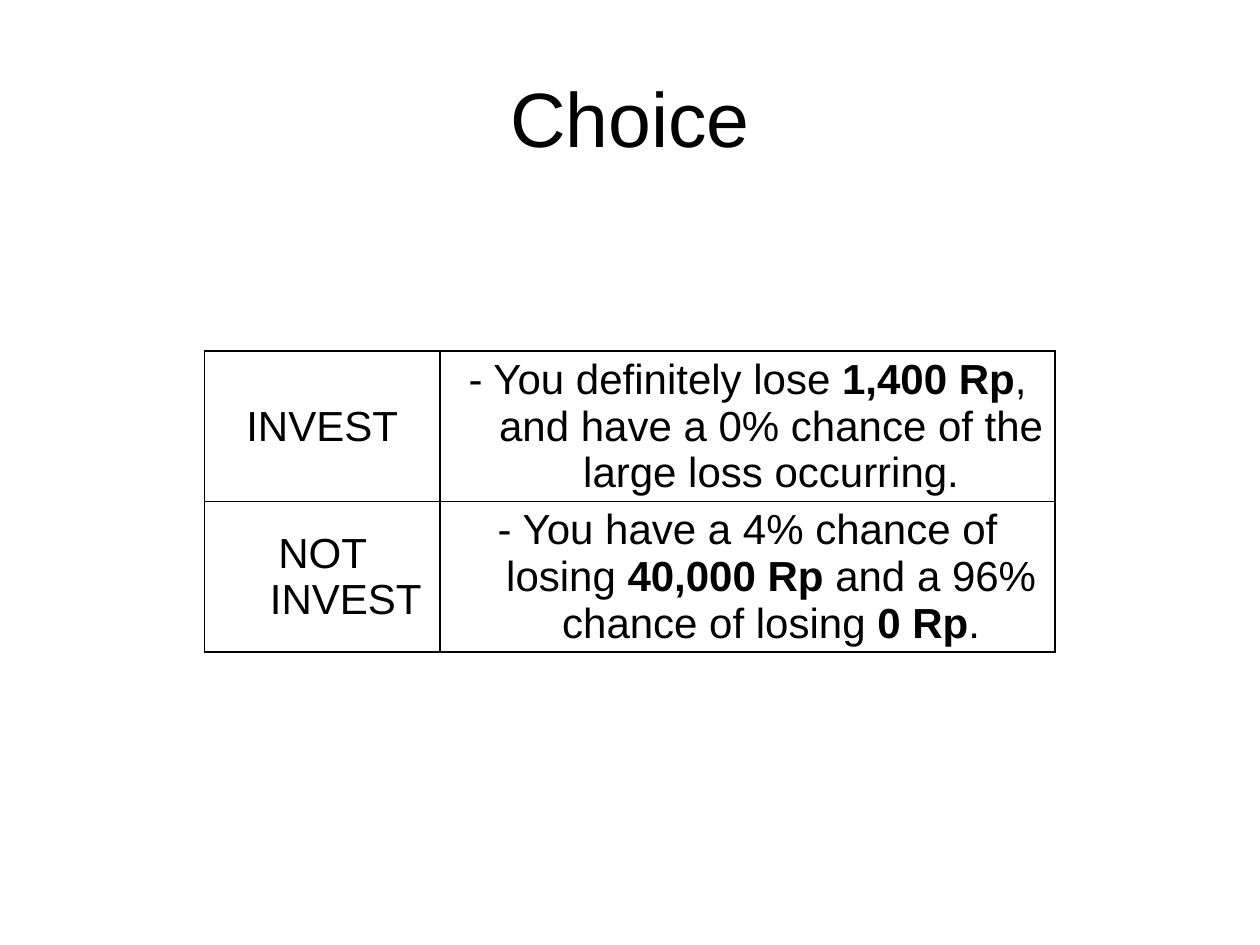
from lxml.etree import SubElement
from pptx import Presentation
from pptx.dml.color import RGBColor
from pptx.enum.text import MSO_ANCHOR as Anchor, PP_ALIGN as Align
from pptx.oxml.ns import qn
from pptx.util import Cm, Pt

FONT = "Arial"
BLACK = "000000"
COLUMN_WIDTHS = (4.75, 12.4)
ROW_HEIGHT = 2.62
CHOICES = [
    ([("INVEST", False)],
     [("- You definitely lose ", False), ("1,400 Rp", True),
      (", and have a 0% chance of the large loss occurring.", False)]),
    ([("NOT INVEST", False)],
     [("- You have a 4% chance of ", False), ("losing ", False),
      ("40,000 Rp", True), (" and a 96% chance of losing ", False),
      ("0 Rp", True), (".", False)]),
]


def rgb(value):
    return RGBColor.from_string(value)


def add_text(para, text, size=24, bold=False, color=BLACK, font=FONT):
    span = para.add_run()
    span.text = text
    span.font.name = font
    span.font.size = Pt(size)
    span.font.bold = bold
    span.font.color.rgb = rgb(color)


def set_margins(box, horizontal, vertical):
    box.margin_left = box.margin_right = Cm(horizontal)
    box.margin_top = box.margin_bottom = Cm(vertical)


def set_borders(cell, color=BLACK, width=1):
    """Outline the cell; call before filling it, as borders precede the fill."""
    properties = cell._tc.get_or_add_tcPr()
    for side in ("lnL", "lnR", "lnT", "lnB"):
        line = SubElement(properties, qn(f"a:{side}"), w=str(Pt(width)))
        fill = SubElement(line, qn("a:solidFill"))
        SubElement(fill, qn("a:srgbClr"), val=color)


def place_title(page, text, left, top, width, height):
    title = page.shapes.title
    title.left, title.top = Cm(left), Cm(top)
    title.width, title.height = Cm(width), Cm(height)
    frame = title.text_frame
    frame.vertical_anchor = Anchor.MIDDLE
    set_margins(frame, 0.25, 0.13)
    para = frame.paragraphs[0]
    para.alignment = Align.CENTER
    add_text(para, text, size=44)


def fill_cell(cell, spans, hanging=0.95):
    set_borders(cell)
    cell.fill.background()
    cell.vertical_anchor = Anchor.MIDDLE
    set_margins(cell, 0.18, 0.1)
    para = cell.text_frame.paragraphs[0]
    para.alignment = Align.CENTER
    indent = para._p.get_or_add_pPr()
    indent.set("marL", str(Cm(hanging)))
    indent.set("indent", str(-Cm(hanging)))
    for text, bold in spans:
        add_text(para, text, bold=bold)


def place_choices(page, choices, left, top):
    frame = page.shapes.add_table(
        len(choices), len(COLUMN_WIDTHS), Cm(left), Cm(top),
        Cm(sum(COLUMN_WIDTHS)), Cm(ROW_HEIGHT * len(choices)))
    table = frame.table
    table.first_row = table.horz_banding = False
    for column, width in zip(table.columns, COLUMN_WIDTHS):
        column.width = Cm(width)
    for row, contents in zip(table.rows, choices):
        row.height = Cm(ROW_HEIGHT)
        for cell, spans in zip(row.cells, contents):
            fill_cell(cell, spans)


def main():
    deck = Presentation()
    deck.slide_width, deck.slide_height = Cm(25.4), Cm(19.05)
    page = deck.slides.add_slide(deck.slide_layouts.get_by_name("Title Only"))
    page.background.fill.solid()
    page.background.fill.fore_color.rgb = rgb("FFFFFF")
    place_title(page, "Choice", 1.27, 0.76, 22.86, 3.18)
    place_choices(page, CHOICES, 4.12, 7.08)
    deck.save("out.pptx")


if __name__ == "__main__":
    main()
